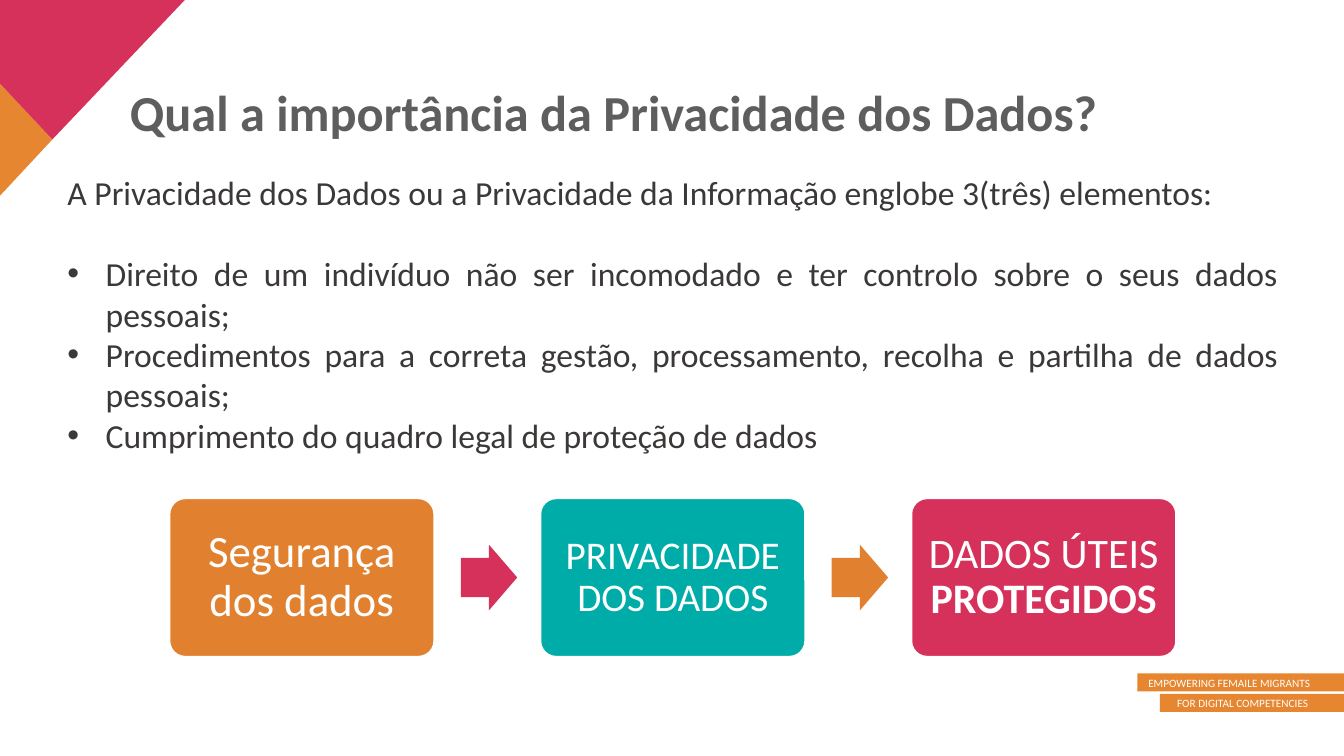
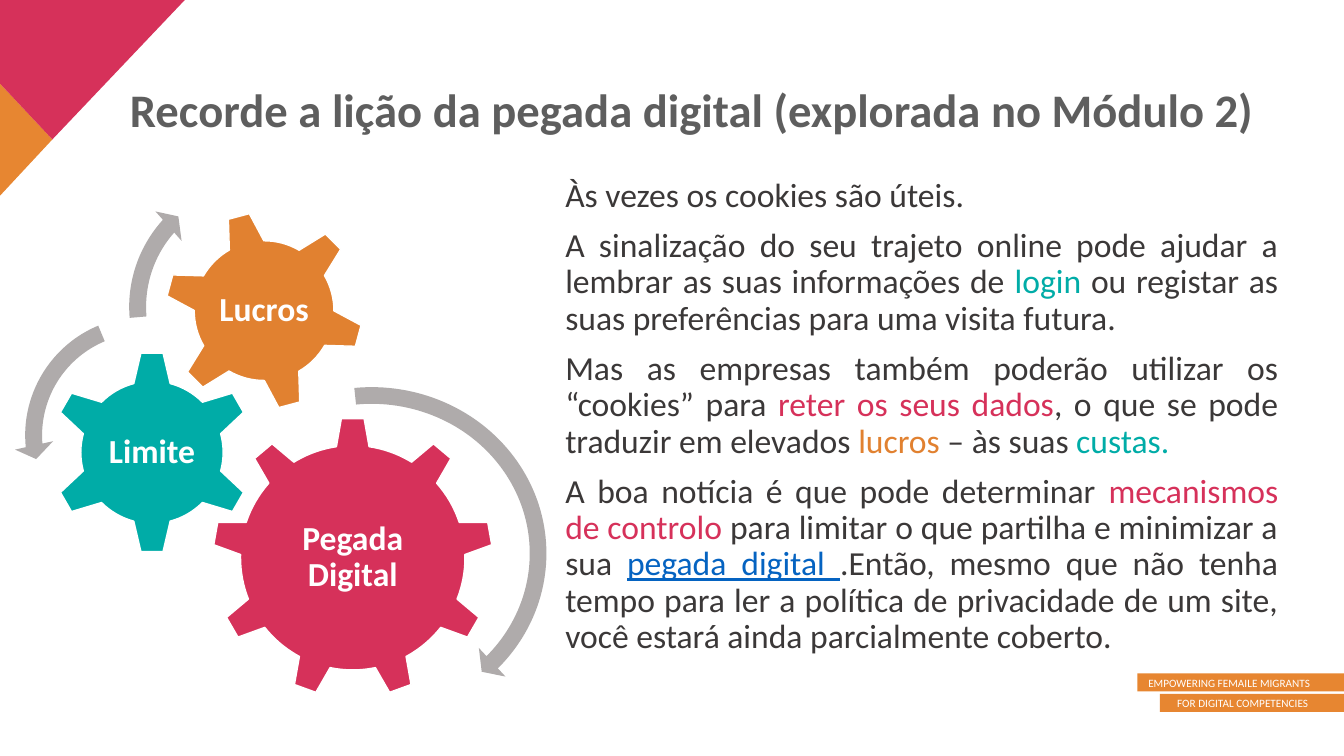
from dataclasses import dataclass
from typing import NamedTuple, Optional

from lxml import etree
from pptx import Presentation
from pptx.dml.color import RGBColor
from pptx.enum.shapes import MSO_SHAPE
from pptx.enum.text import MSO_ANCHOR, PP_ALIGN
from pptx.oxml.ns import qn
from pptx.util import Inches, Pt

# Grid of 160 x 90 square cells; every length below is in cells
COLS, ROWS = 160, 90
SLIDE_W, SLIDE_H = Inches(40 / 3), Inches(7.5)
CELL = SLIDE_W / COLS
RIGHT_EDGE = 153.36

FONT = "Calibri"
WHITE = RGBColor(0xFF, 0xFF, 0xFF)
PINK = RGBColor(0xD6, 0x31, 0x5A)
ORANGE = RGBColor(0xE1, 0x81, 0x30)
BAND_ORANGE = RGBColor(0xE7, 0x86, 0x31)
TEAL = RGBColor(0x00, 0xAC, 0xA7)
TITLE_GREY = RGBColor(0x5E, 0x5E, 0x5E)
TEXT_GREY = RGBColor(0x3B, 0x38, 0x38)
ARC_GREY = RGBColor(0xAF, 0xAB, 0xAB)
LINK_BLUE = RGBColor(0x05, 0x63, 0xC1)


class Box(NamedTuple):
    left: float
    top: float
    width: float
    height: float


class Span(NamedTuple):
    text: str
    color: RGBColor = TEXT_GREY
    bold: bool = False
    underline: bool = False


@dataclass(frozen=True)
class Para:
    spans: list[Span]
    align: PP_ALIGN = PP_ALIGN.JUSTIFY
    line: float = 0.9
    before: float = 0
    after: float = 0
    bullet: bool = False


@dataclass(frozen=True)
class Band:
    left: float
    top: float
    margin_right: float
    text: str


@dataclass(frozen=True)
class Step:
    spans: list[Span]
    size: float
    fill: RGBColor
    arrow: Optional[RGBColor] = None


@dataclass(frozen=True)
class Gear:
    kind: MSO_SHAPE
    left: float
    top: float
    side: float
    fill: RGBColor
    text: str
    label_w: float
    label_h: float
    rotation: float = 0


@dataclass(frozen=True)
class Arc:
    kind: MSO_SHAPE
    box: Box
    adjustments: tuple[float, ...]


CORNERS = [
    (BAND_ORANGE, [(0, 9.96), (6.24, 16.6), (0, 23.3)]),
    (PINK, [(0, 0), (22, 0), (6.24, 16.6), (0, 9.96)]),
]
BANDS = [
    Band(135.4, 80.16, 4.0, "EMPOWERING FEMAILE MIGRANTS"),
    Band(138.1, 82.6, 4.24, "FOR DIGITAL COMPETENCIES"),
]
STEPS = [
    Step([Span("Segurança dos dados", WHITE)], 32, ORANGE, PINK),
    Step([Span("PRIVACIDADE DOS DADOS", WHITE)], 28, TEAL, ORANGE),
    Step([Span("DADOS ÚTEIS ", WHITE), Span("PROTEGIDOS", WHITE, True)], 30, PINK),
]
GEARS = [
    Gear(MSO_SHAPE.GEAR_9, 25.3, 49.7, 33.4, PINK, "Pegada Digital", 19.9, 17.2),
    Gear(MSO_SHAPE.GEAR_6, 6, 41.76, 24.2, TEAL, "Limite", 12, 12),
    Gear(MSO_SHAPE.GEAR_6, 19.56, 25.1, 23.76, ORANGE, "Lucros", 13.3, 13.3, 345),
]
# Adjustments are in units of 100000, as the shape presets store them
ARCS = [
    Arc(MSO_SHAPE.CIRCULAR_ARROW, Box(22.1, 44.76, 44.28, 42.24),
        (0.047, 2.99, 25.254, 158.414, 0.055)),
    Arc(MSO_SHAPE.LEFT_CIRCULAR_ARROW, Box(1.68, 36.36, 30.96, 30.96),
        (0.065, 4.3, 104.891, 148.378, 0.075)),
    Arc(MSO_SHAPE.CIRCULAR_ARROW, Box(14.04, 19.8, 33.48, 33.48),
        (0.06, 3.941, 133.138, 105.082, 0.07)),
]
ELEMENTS = [
    "Direito de um indivíduo não ser incomodado e ter controlo sobre o seus dados pessoais;",
    "Procedimentos para a correta gestão, processamento, recolha e partilha de dados pessoais;",
    "Cumprimento do quadro legal de proteção de dados",
]
COOKIES = [
    [Span("Às vezes os cookies são úteis.")],
    [Span("A sinalização do seu trajeto online pode ajudar a lembrar as suas informações de "),
     Span("login", TEAL),
     Span(" ou registar as suas preferências para uma visita futura.")],
    [Span("Mas as empresas também poderão utilizar os “cookies” para "),
     Span("reter os seus dados", PINK),
     Span(", o que se pode traduzir em elevados "),
     Span("lucros", ORANGE),
     Span(" – às suas "),
     Span("custas.", TEAL)],
    [Span("A boa notícia é que pode determinar "),
     Span("mecanismos de controlo", PINK),
     Span(" para limitar o que partilha e minimizar a sua "),
     Span("pegada digital ", LINK_BLUE, underline=True),
     Span(".Então, mesmo que não tenha tempo para ler a política de privacidade "
          "de um site, você estará ainda parcialmente coberto.")],
]


def cells(n: float) -> int:
    return round(n * CELL)


def paint(sp, fill: RGBColor, line_pt: float = 0) -> None:
    sp.shadow.inherit = False
    sp.fill.solid()
    sp.fill.fore_color.rgb = fill
    if line_pt:
        sp.line.color.rgb = WHITE
        sp.line.width = Pt(line_pt)
    else:
        sp.line.fill.background()


def add_preset(s, kind: MSO_SHAPE, box: Box, fill: RGBColor, line_pt: float = 0,
               adjustments: tuple[float, ...] = ()):
    sp = s.shapes.add_shape(kind, *map(cells, box))
    for i, value in enumerate(adjustments):
        sp.adjustments[i] = value
    paint(sp, fill, line_pt)
    return sp


def set_margins(tf, left: float, top: float, right: float, bottom: float) -> None:
    tf.margin_left, tf.margin_top = cells(left), cells(top)
    tf.margin_right, tf.margin_bottom = cells(right), cells(bottom)


def add_bullet(p) -> None:
    pPr = p._p.get_or_add_pPr()
    pPr.set("marL", str(Inches(0.38)))
    pPr.set("indent", str(-Inches(0.38)))
    font = etree.SubElement(pPr, qn("a:buFont"))
    font.set("typeface", "Arial")
    etree.SubElement(pPr, qn("a:buChar")).set("char", "•")


def write(tf, paras: list[Para], size: float,
          anchor: MSO_ANCHOR = MSO_ANCHOR.TOP) -> None:
    tf.word_wrap = True
    tf.vertical_anchor = anchor
    for i, para in enumerate(paras):
        p = tf.add_paragraph() if i else tf.paragraphs[0]
        p.alignment = para.align
        p.line_spacing = para.line
        p.space_before, p.space_after = Pt(para.before), Pt(para.after)
        if para.bullet:
            add_bullet(p)
        for span in para.spans:
            r = p.add_run()
            r.text = span.text
            r.font.name, r.font.size = FONT, Pt(size)
            r.font.color.rgb = span.color
            r.font.bold, r.font.underline = span.bold, span.underline


def add_text(s, box: Box, paras: list[Para], size: float):
    sp = s.shapes.add_textbox(*map(cells, box))
    write(sp.text_frame, paras, size)
    return sp


def add_base_slide(prs, title: str, title_size: float):
    """Blank slide with corner triangles, footer bands and title."""
    s = prs.slides.add_slide(prs.slide_layouts[6])
    for fill, points in CORNERS:
        start, *rest = [(cells(x), cells(y)) for x, y in points]
        builder = s.shapes.build_freeform(*start)
        builder.add_line_segments(rest, close=True)
        paint(builder.convert_to_shape(), fill)
    for band in BANDS:
        box = Box(band.left, band.top, COLS - band.left, 2.16)
        tf = add_preset(s, MSO_SHAPE.RECTANGLE, box, BAND_ORANGE).text_frame
        set_margins(tf, 0, 0.1, band.margin_right, 0)
        caption = Para([Span(band.text, WHITE)], PP_ALIGN.RIGHT, line=1)
        write(tf, [caption], 8, MSO_ANCHOR.MIDDLE)
    heading = Para([Span(title, TITLE_GREY, bold=True)], PP_ALIGN.LEFT, before=10)
    add_text(s, Box(14.28, 9.84, RIGHT_EDGE - 14.28, 12.48), [heading], title_size)
    return s


def add_steps(s) -> None:
    left, top, width, height, pitch = 20.16, 59.3, 31.56, 18.9, 44.16
    arrow_w, arrow_h = 6.72, 7.8
    for i, step in enumerate(STEPS):
        x = left + i * pitch
        sp = add_preset(s, MSO_SHAPE.ROUNDED_RECTANGLE, Box(x, top, width, height),
                        step.fill, 1.5, (0.1,))
        set_margins(sp.text_frame, 1.5, 1.5, 1.5, 1.5)
        write(sp.text_frame, [Para(step.spans, PP_ALIGN.CENTER)], step.size,
              MSO_ANCHOR.MIDDLE)
        if step.arrow is not None:
            box = Box(x + 34.7, top + (height - arrow_h) / 2, arrow_w, arrow_h)
            add_preset(s, MSO_SHAPE.RIGHT_ARROW, box, step.arrow, 0, (0.6, 0.5))


def add_gears(s) -> None:
    for gear in GEARS:
        box = Box(gear.left, gear.top, gear.side, gear.side)
        add_preset(s, gear.kind, box, gear.fill, 1).rotation = gear.rotation
        # Upright label centred on the gear
        label = Box(gear.left + (gear.side - gear.label_w) / 2,
                    gear.top + (gear.side - gear.label_h) / 2,
                    gear.label_w, gear.label_h)
        para = Para([Span(gear.text, WHITE, bold=True)], PP_ALIGN.CENTER)
        tf = add_text(s, label, [para], 24).text_frame
        set_margins(tf, 0.36, 0.36, 0.36, 0.36)
        tf.vertical_anchor = MSO_ANCHOR.MIDDLE
    for arc in ARCS:
        add_preset(s, arc.kind, arc.box, ARC_GREY, 0, arc.adjustments)


def main() -> None:
    prs = Presentation()
    prs.slide_width, prs.slide_height = SLIDE_W, SLIDE_H

    # Why data privacy matters
    s = add_base_slide(prs, "Qual a importância da Privacidade dos Dados?", 36)
    intro = Span("A Privacidade dos Dados ou a Privacidade da Informação "
                 "englobe 3(três) elementos:")
    paras = [Para([intro], line=1, after=29)]
    paras += [Para([Span(text)], line=1, bullet=True) for text in ELEMENTS]
    add_text(s, Box(6.84, 19.92, RIGHT_EDGE - 6.84, 53.4), paras, 24)
    add_steps(s)

    # Digital footprint
    s = add_base_slide(
        prs, "Recorde a lição da pegada digital (explorada no Módulo 2)", 33.3)
    paras = [Para(spans, before=10) for spans in COOKIES]
    add_text(s, Box(66.12, 20.64, RIGHT_EDGE - 66.12, 64.1), paras, 24)
    add_gears(s)

    prs.save("out.pptx")


if __name__ == "__main__":
    main()
